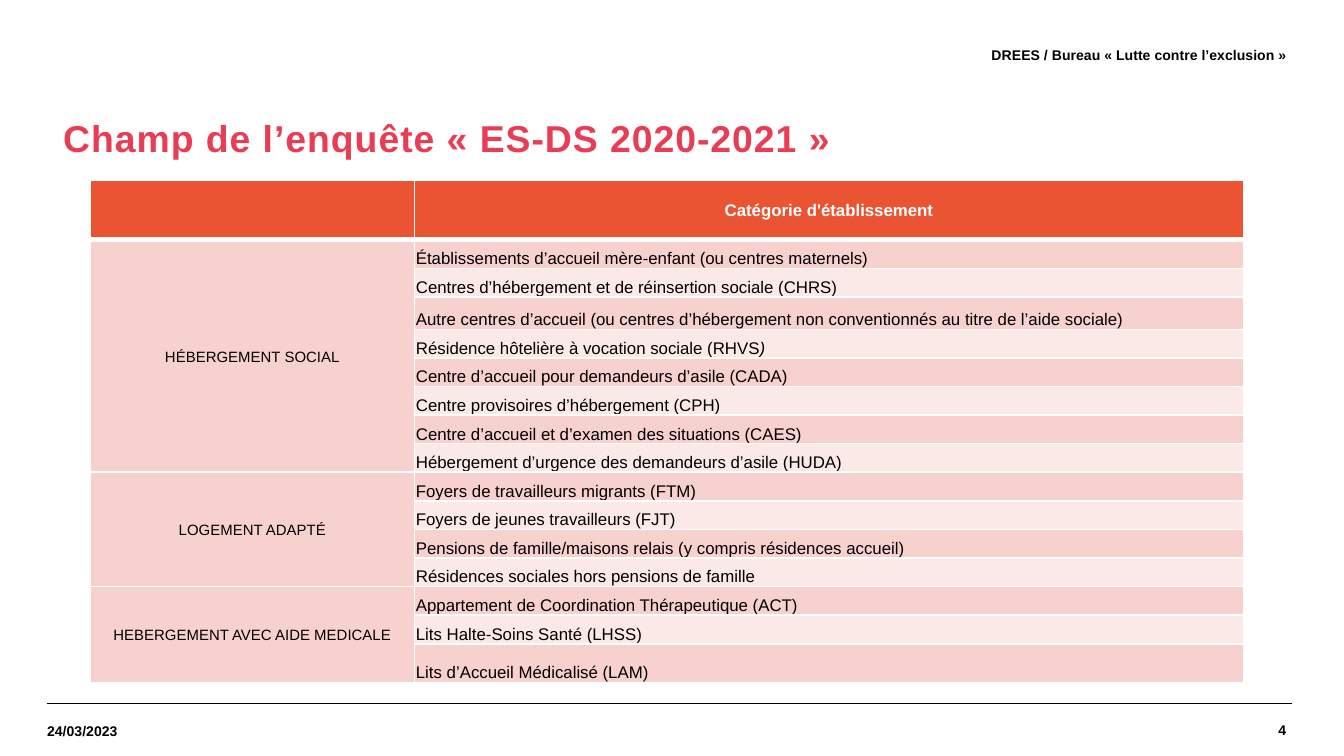
"""Build the slide on the scope of the ES-DS 2020-2021 survey."""
from dataclasses import dataclass

from lxml.etree import SubElement
from pptx import Presentation
from pptx.dml.color import RGBColor
from pptx.enum.shapes import MSO_CONNECTOR
from pptx.enum.text import MSO_ANCHOR, PP_ALIGN
from pptx.oxml.ns import qn
from pptx.util import Cm, Pt


@dataclass(frozen=True)
class Theme:
    """Hold the colours and type sizes."""
    font: str = "Arial"
    black: str = "000000"
    white: str = "FFFFFF"
    rose: str = "E83D54"
    head: str = "EA5433"
    dark: str = "F7D1CE"
    pale: str = "FBE9E8"
    title: float = 20
    cell: float = 9
    group: float = 8
    note: float = 7.5


THEME = Theme()
GROUPS = [
    ("HÉBERGEMENT SOCIAL", [
        ["Établissements d’accueil mère-enfant (ou centres maternels)"],
        ["Centres d’hébergement et de réinsertion sociale (CHRS)"],
        ["Autre centres d’accueil (ou centres d’hébergement non "
         "conventionnés au titre de l’aide sociale)"],
        ["Résidence hôtelière à vocation sociale (RHVS", ")"],
        ["Centre d’accueil pour demandeurs d’asile (CADA)"],
        ["Centre provisoires d’hébergement (CPH)"],
        ["Centre d’accueil et d’examen des situations (CAES)"],
        ["Hébergement d’urgence des demandeurs d’asile (HUDA)"],
    ]),
    ("LOGEMENT ADAPTÉ", [
        ["Foyers de travailleurs migrants (FTM)"],
        ["Foyers de jeunes travailleurs (FJT)"],
        ["Pensions de famille/maisons relais (y compris résidences accueil)"],
        ["Résidences sociales hors pensions de famille"],
    ]),
    ("HEBERGEMENT AVEC AIDE MEDICALE", [
        ["Appartement de Coordination Thérapeutique (ACT)"],
        ["Lits Halte-Soins Santé (LHSS)"],
        ["Lits d’Accueil Médicalisé (LAM)"],
    ]),
]


def add_run(para, text, size, color=THEME.black, bold=False, italic=False):
    """Add one styled run to a paragraph."""
    run = para.add_run()
    run.text = text
    font = run.font
    font.name, font.size = THEME.font, Pt(size)
    font.bold, font.italic = bold, italic
    font.color.rgb = RGBColor.from_string(color)
    return run


def add_note(slide, text, box, align):
    """Add a small bold text in the header or footer."""
    frame = slide.shapes.add_textbox(*map(Cm, box)).text_frame
    frame.word_wrap = True
    frame.vertical_anchor = MSO_ANCHOR.MIDDLE
    frame.margin_left = frame.margin_right = 0
    frame.margin_top = frame.margin_bottom = 0
    para = frame.paragraphs[0]
    para.alignment = align
    add_run(para, text, THEME.note, bold=True)


def add_rule(slide, left):
    """Add a thin black footer rule."""
    ends = map(Cm, (left, 13.29, left + 23.42, 13.29))
    rule = slide.shapes.add_connector(MSO_CONNECTOR.STRAIGHT, *ends)
    rule.line.color.rgb = RGBColor.from_string(THEME.black)
    rule.line.width = Pt(0.8)
    SubElement(rule._element.spPr, qn("a:effectLst"))


def set_title(slide, text):
    """Place the title and write its text."""
    title = slide.shapes.title
    title.left, title.top = Cm(0.89), Cm(1.9)
    title.width, title.height = Cm(23.4), Cm(1.5)
    frame = title.text_frame
    frame.vertical_anchor = MSO_ANCHOR.MIDDLE
    para = frame.paragraphs[0]
    para.alignment = PP_ALIGN.LEFT
    para.line_spacing = 0.9
    para._p.get_or_add_pPr().set("marL", str(Cm(0.05)))
    run = add_run(para, text, THEME.title, THEME.rose, bold=True)
    run.font._element.set("spc", "50")


def style_cell(cell, fill, base=1):
    """Set the margins, white borders and fill of a cell."""
    cell.margin_left = cell.margin_right = cell.margin_top = Cm(0.03)
    cell.margin_bottom = 0
    props = cell._tc.get_or_add_tcPr()
    for side, width in zip("LRTB", (1, 1, 1, base)):
        line = SubElement(props, qn(f"a:ln{side}"), w=str(Pt(width)))
        paint = SubElement(line, qn("a:solidFill"))
        SubElement(paint, qn("a:srgbClr"), val=THEME.white)
    cell.fill.solid()
    cell.fill.fore_color.rgb = RGBColor.from_string(fill)


def fill_cell(cell, text, size, color=THEME.black, bold=False):
    """Write centred text in a cell."""
    cell.vertical_anchor = MSO_ANCHOR.MIDDLE
    para = cell.text_frame.paragraphs[0]
    para.alignment = PP_ALIGN.CENTER
    add_run(para, text, size, color, bold)


def add_grid(slide):
    """Add the table of categories by group."""
    heights = [1.12] + [0.54] * 15
    heights[3], heights[15] = 0.61, 0.73
    box = map(Cm, (1.71, 3.41, 21.79, sum(heights)))
    grid = slide.shapes.add_table(len(heights), 2, *box).table
    for col, width in zip(grid.columns, (6.12, 15.67)):
        col.width = Cm(width)
    for row, height in zip(grid.rows, heights):
        row.height = Cm(height)
    for col in range(2):
        style_cell(grid.cell(0, col), THEME.head, 3)
    fill_cell(grid.cell(0, 1), "Catégorie d'établissement", THEME.cell,
              THEME.white, True)
    top = 1
    for name, items in GROUPS:
        for row, parts in enumerate(items, top):
            style_cell(grid.cell(row, 0), THEME.dark)
            cell = grid.cell(row, 1)
            style_cell(cell, THEME.dark if row % 2 else THEME.pale)
            cell.vertical_anchor = MSO_ANCHOR.BOTTOM
            para = cell.text_frame.paragraphs[0]
            for spot, part in enumerate(parts):
                add_run(para, part, THEME.cell, italic=spot > 0)
        first = grid.cell(top, 0)
        first.merge(grid.cell(top + len(items) - 1, 0))
        fill_cell(first, name, THEME.group)
        top += len(items)


def main():
    """Build and save the slide."""
    deck = Presentation()
    deck.slide_width, deck.slide_height = Cm(25.4), Cm(14.28)
    slide = deck.slides.add_slide(deck.slide_layouts[5])
    for left in (0.89, 0.99):
        add_rule(slide, left)
    add_note(slide, "4", (20.55, 13.28, 3.76, 1), PP_ALIGN.RIGHT)
    add_note(slide, "DREES / Bureau « Lutte contre l’exclusion »",
             (7.98, 0.53, 16.33, 1), PP_ALIGN.RIGHT)
    add_note(slide, "24/03/2023", (0.89, 13.33, 3.25, 0.96), PP_ALIGN.LEFT)
    set_title(slide, "Champ de l’enquête « ES-DS 2020-2021 »")
    add_grid(slide)
    deck.save("out.pptx")


if __name__ == "__main__":
    main()
